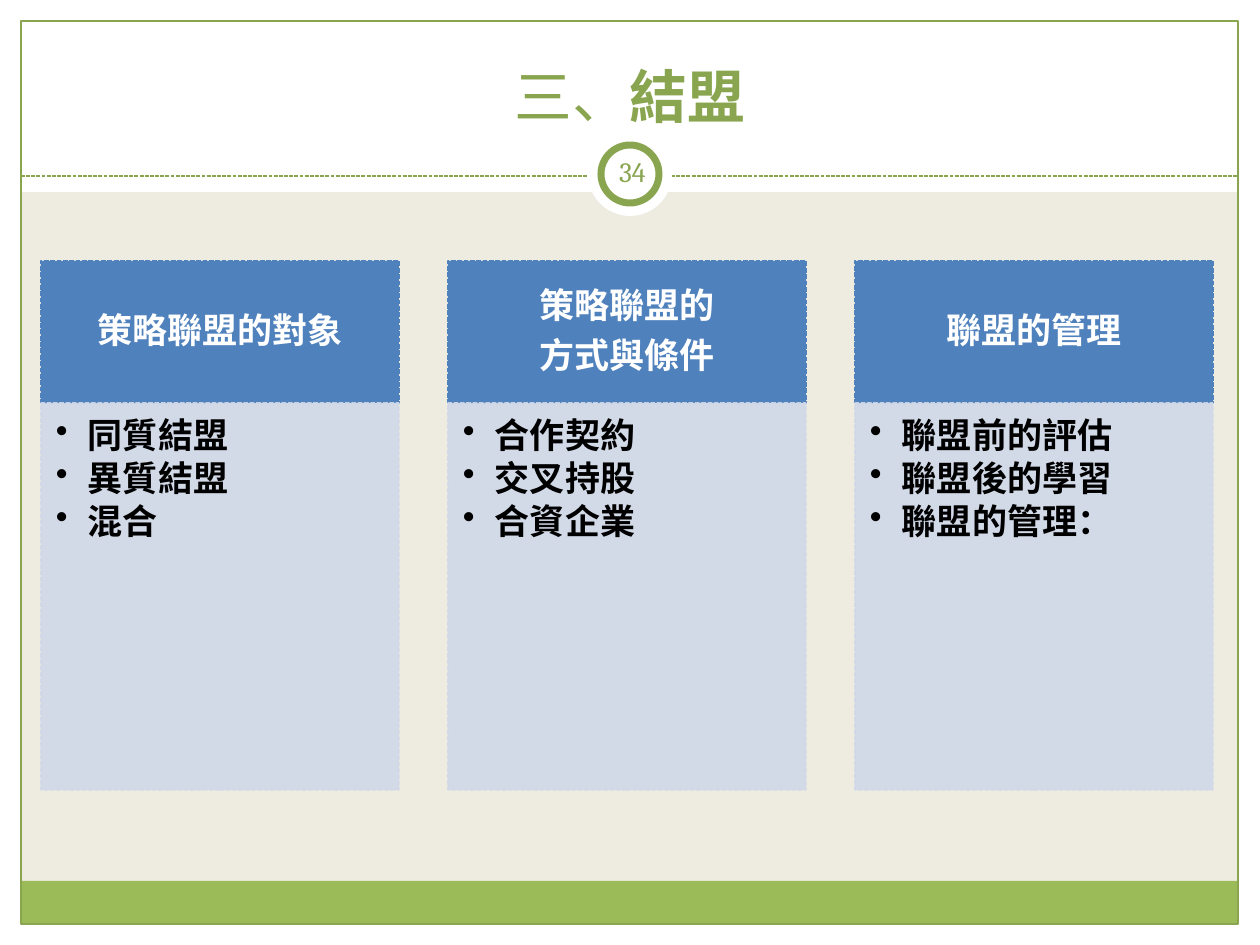
import pptx
import pptx.util
import pptx.dml.color
import pptx.enum.dml
import pptx.enum.shapes
import pptx.enum.text
import pptx.oxml.ns
import lxml.etree

PX = 914400 // 126
KIND = pptx.enum.shapes.MSO_SHAPE
ALIGN = pptx.enum.text.PP_ALIGN
ANCHOR = pptx.enum.text.MSO_ANCHOR
DASH = pptx.enum.dml.MSO_LINE.SQUARE_DOT
qn = pptx.oxml.ns.qn


class Theme:
    back = "EEECE1"
    white = "FFFFFF"
    black = "000000"
    olive = "89A54F"
    green = "9BBB59"
    blue = "4F81BD"
    pale = "D0D8E8"
    serif = "Cambria"
    sans = "Arial"
    title = 33
    number = 16
    body = 20


def draw(kind, box, fill=None, line=None, width=0.75):
    shape = slide.shapes.add_shape(kind, *[v * PX for v in box])
    shape.shadow.inherit = False
    if fill:
        shape.fill.solid()
        shape.fill.fore_color.rgb = pptx.dml.color.RGBColor.from_string(fill)
    else:
        shape.fill.background()
    if line:
        shape.line.color.rgb = pptx.dml.color.RGBColor.from_string(line)
        shape.line.width = pptx.util.Pt(width)
    else:
        shape.line.fill.background()
    return shape


def write(shape, text, face, size, color, bold, align, anchor, inset):
    frame = shape.text_frame
    frame.word_wrap = True
    frame.vertical_anchor = anchor
    (frame.margin_left, frame.margin_top,
     frame.margin_right, frame.margin_bottom) = [v * PX for v in inset]
    frame.text = text
    for para in frame.paragraphs:
        para.alignment = align
        for run in para.runs:
            run.font.name = face
            run.font.size = pptx.util.Pt(size)
            run.font.bold = bold
            run.font.color.rgb = pptx.dml.color.RGBColor.from_string(color)
    return frame


deck = pptx.Presentation()
deck.slide_width, deck.slide_height = 1260 * PX, 945 * PX
slide = deck.slides.add_slide(deck.slide_layouts[6])
slide.background.fill.solid()
slide.background.fill.fore_color.rgb = pptx.dml.color.RGBColor.from_string(Theme.back)

# White margins, green foot and thin frame
for box in [(0, 924, 1260, 21), (0, 0, 1260, 192),
            (0, 0, 21, 945), (1239, 0, 21, 945)]:
    draw(KIND.RECTANGLE, box, Theme.white)
draw(KIND.RECTANGLE, (21, 881, 1217, 43), Theme.green)
draw(KIND.RECTANGLE, (21, 21, 1217, 903), line=Theme.olive)

# Dashed rule under the title
rule = slide.shapes.add_connector(
    pptx.enum.shapes.MSO_CONNECTOR.STRAIGHT, 21 * PX, 176 * PX, 1239 * PX, 176 * PX)
rule.line.color.rgb = pptx.dml.color.RGBColor.from_string(Theme.olive)
rule.line.width = pptx.util.Pt(0.75)
rule.line.dash_style = DASH
lxml.etree.SubElement(rule._element.spPr, qn("a:effectLst"))

# Number ring
draw(KIND.OVAL, (588, 132, 84, 84), Theme.white)
draw(KIND.OVAL, (601, 145, 58, 58), Theme.white, Theme.olive, 4)

# Title and slide number
title = slide.shapes.add_textbox(42 * PX, 32 * PX, 1176 * PX, 104 * PX)
frame = write(title, "三、", Theme.serif, Theme.title, Theme.olive, False,
              ALIGN.CENTER, ANCHOR.BOTTOM, (13, 6, 13, 6))
word = frame.paragraphs[0].add_run()
word.text = "結盟"
word.font.name = Theme.serif
word.font.size = pptx.util.Pt(Theme.title)
word.font.bold = True
word.font.color.rgb = pptx.dml.color.RGBColor.from_string(Theme.olive)

number = slide.shapes.add_textbox(601 * PX, 141 * PX, 63 * PX, 61 * PX)
write(number, "34", Theme.serif, Theme.number, Theme.olive, False,
      ALIGN.CENTER, ANCHOR.MIDDLE, (6, 6, 6, 6))

# Three columns: blue head over a pale list
columns = [
    ("策略聯盟的對象", "同質結盟\n異質結盟\n混合"),
    ("策略聯盟的\n方式與條件", "合作契約\n交叉持股\n合資企業"),
    ("聯盟的管理", "聯盟前的評估\n聯盟後的學習\n聯盟的管理："),
]
for i, (name, items) in enumerate(columns):
    left = 41 + 407 * i
    head = draw(KIND.RECTANGLE, (left, 261, 358, 142), Theme.blue, Theme.blue, 0.9)
    body = draw(KIND.RECTANGLE, (left, 403, 358, 387), Theme.pale, Theme.pale, 0.9)
    head.line.dash_style = body.line.dash_style = DASH
    for tint in body._element.spPr.iter(qn("a:srgbClr")):
        lxml.etree.SubElement(tint, qn("a:alpha"), val="90000")

    frame = write(head, name, Theme.sans, Theme.body, Theme.white, True,
                  ALIGN.CENTER, ANCHOR.MIDDLE, (20, 11, 20, 11))
    for para in frame.paragraphs:
        para.line_spacing = 0.9
        para.space_after = pptx.util.Pt(7)

    frame = write(body, items, Theme.sans, Theme.body, Theme.black, True,
                  ALIGN.LEFT, ANCHOR.TOP, (15, 15, 20, 21))
    for para in frame.paragraphs:
        para.line_spacing = 0.9
        para.space_after = pptx.util.Pt(3)
        props = para._p.get_or_add_pPr()
        props.set("marL", str(32 * PX))
        props.set("indent", str(-32 * PX))
        lxml.etree.SubElement(props, qn("a:buChar"), char="•")

deck.save("out.pptx")
